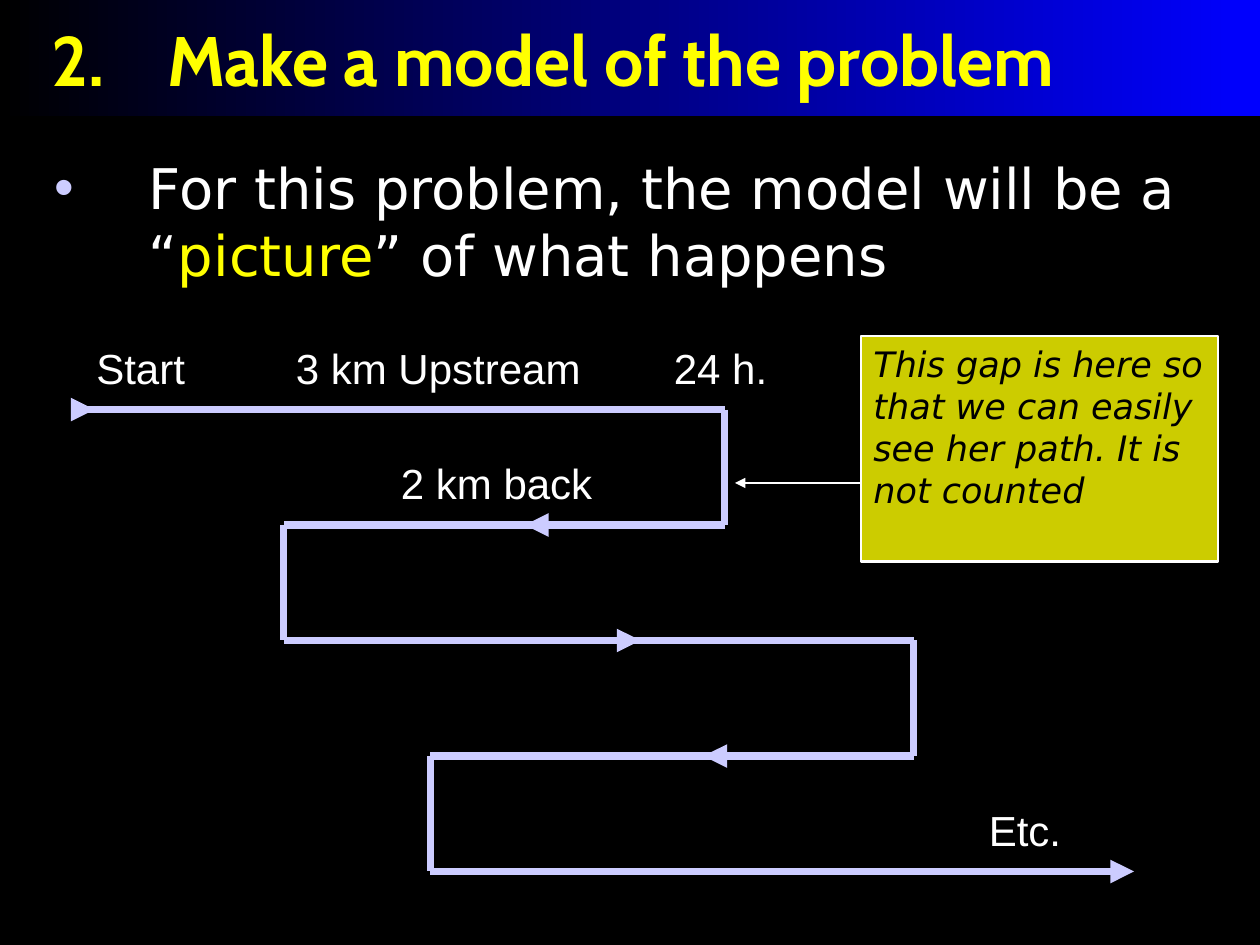
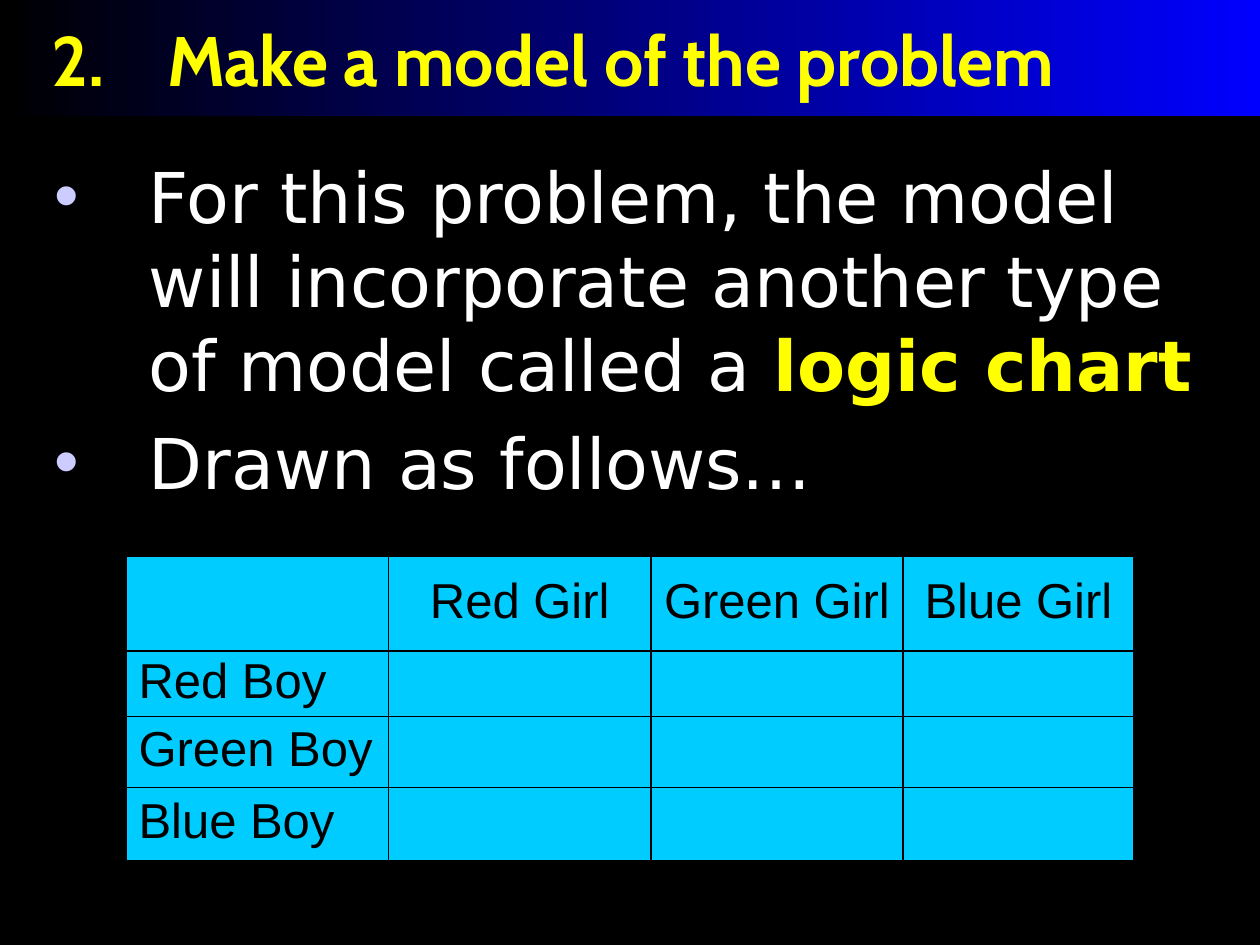
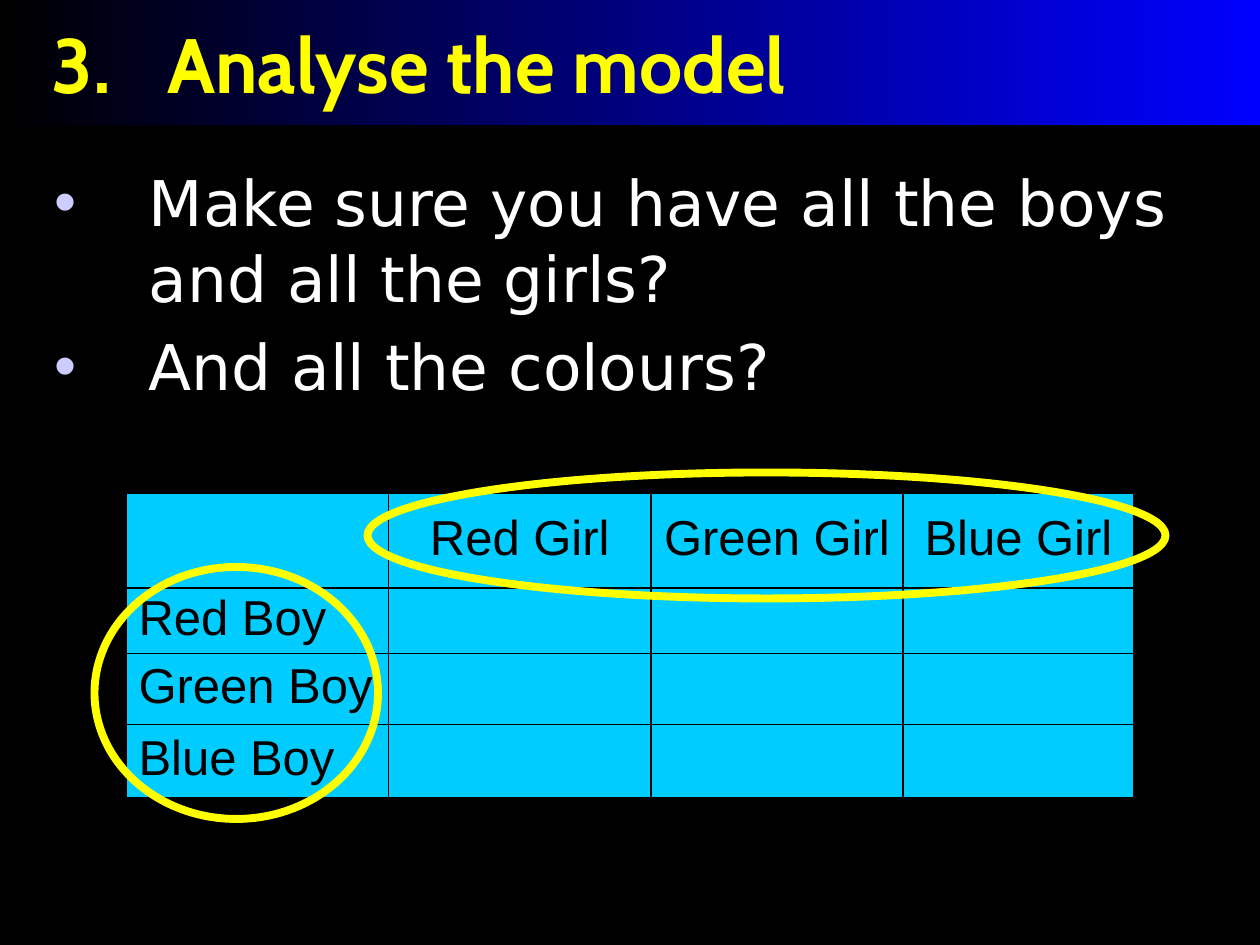
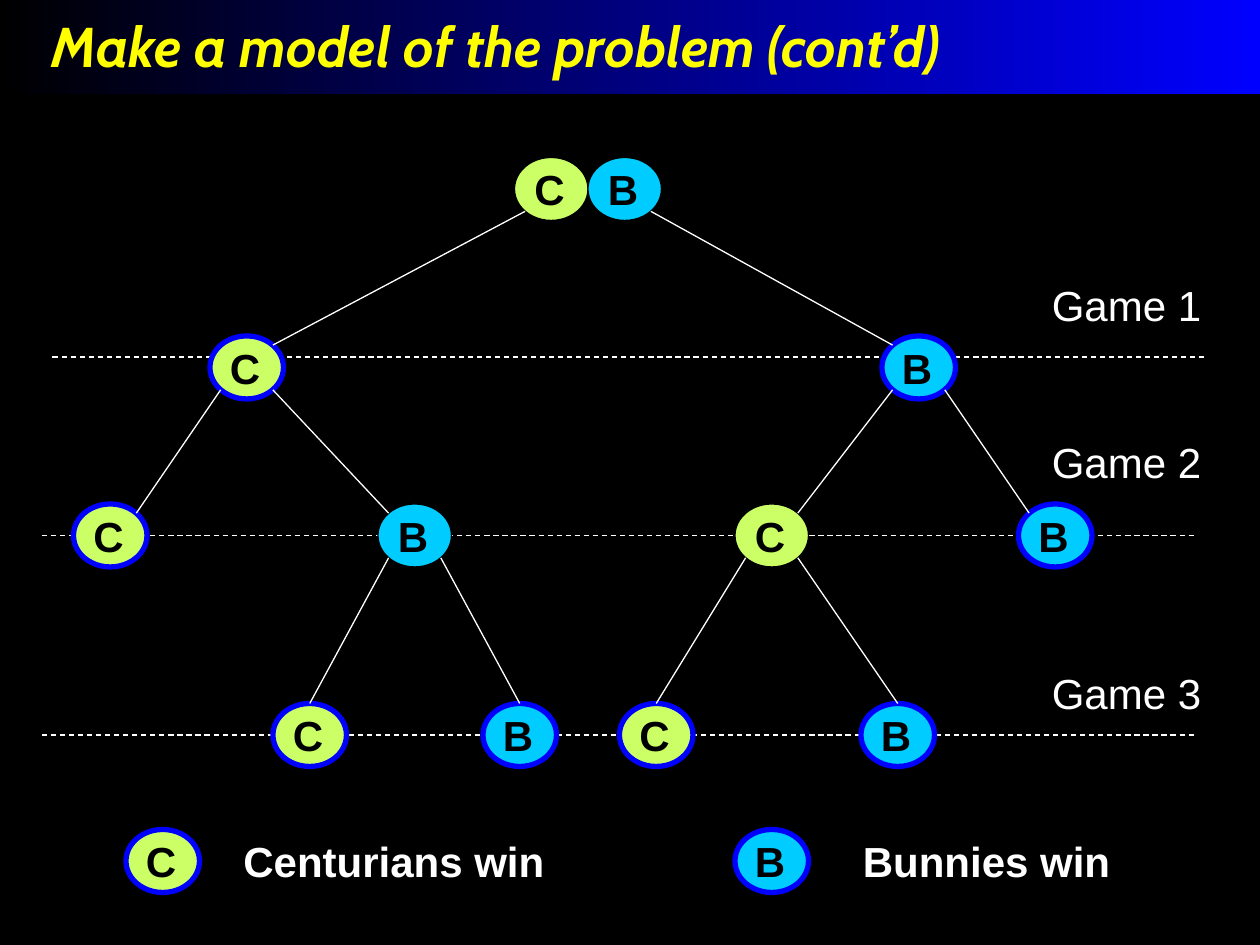
import pptx
import pptx.util
import pptx.dml.color
import pptx.enum.dml
import pptx.enum.shapes
import pptx.enum.text
import pptx.oxml
import pptx.oxml.ns

Pt = pptx.util.Pt
RGBColor = pptx.dml.color.RGBColor
SHAPE = pptx.enum.shapes.MSO_SHAPE
ALIGN = pptx.enum.text.PP_ALIGN
ANCHOR = pptx.enum.text.MSO_ANCHOR
qn = pptx.oxml.ns.qn

# Colours and fonts
BLACK = RGBColor(0x00, 0x00, 0x00)
WHITE = RGBColor(0xFF, 0xFF, 0xFF)
BLUE = RGBColor(0x00, 0x00, 0xFF)
YELLOW = RGBColor(0xFF, 0xFF, 0x00)
LILAC = RGBColor(0xCC, 0xCC, 0xFF)
OLIVE = RGBColor(0xCC, 0xCC, 0x00)
CYAN = RGBColor(0x00, 0xCC, 0xFF)
LIME = RGBColor(0xCC, 0xFF, 0x66)
HEAD, BODY, PLAIN = "Cabin", "DejaVu Sans", "Arial"


def add_xml(parent, tag, inner="", **attrs):
    """Append one DrawingML element to parent."""
    names = " ".join(f'{key}="{val}"' for key, val in attrs.items())
    space = pptx.oxml.ns.nsdecls("a")
    parent.append(pptx.oxml.parse_xml(
        f"<a:{tag} {space} {names}>{inner}</a:{tag}>"))


def solid(color):
    return f'<a:solidFill><a:srgbClr val="{color}"/></a:solidFill>'


def write(para, text, size=24, font=PLAIN, color=WHITE, bold=False,
          italic=False, align=None):
    """Add a run of text to a paragraph."""
    run = para.add_run()
    run.text = text
    run.font.size, run.font.name = Pt(size), font
    run.font.bold, run.font.italic = bold, italic
    run.font.color.rgb = color
    if align is not None:
        para.alignment = align


def hang(para, indent):
    """Give a paragraph a hanging indent and return its properties."""
    props = para._p.get_or_add_pPr()
    props.set("marL", str(Pt(indent)))
    props.set("indent", str(-Pt(indent)))
    return props


class Deck:
    """The shared style and the current slide."""

    def __init__(self):
        self.prs = pptx.Presentation()
        self.prs.slide_width, self.prs.slide_height = Pt(720), Pt(540)
        fill = self.prs.slide_master.background.fill
        fill.solid()
        fill.fore_color.rgb = BLACK

    def start(self, title, size=40, number=None, top=0, italic=False):
        """Add a slide with its title band."""
        layout = self.prs.slide_layouts[6]
        self.shapes = self.prs.slides.add_slide(layout).shapes
        band = self.shape(SHAPE.RECTANGLE, 0, top, 720, 1.2 * size + 18.5)
        band.fill.gradient()
        band.fill.gradient_angle = 0
        for stop, color in zip(band.fill.gradient_stops, (BLACK, BLUE)):
            stop.color.rgb = color
        frame = band.text_frame
        frame.margin_left, frame.margin_right = Pt(29.5), Pt(10)
        frame.margin_top = frame.margin_bottom = Pt(9.4)
        frame.vertical_anchor = ANCHOR.TOP
        para = frame.paragraphs[0]
        if number:
            add_xml(hang(para, 66), "buAutoNum", type="arabicPeriod",
                    startAt=number)
        write(para, title, size=size, font=HEAD, color=YELLOW, bold=True,
              italic=italic, align=ALIGN.LEFT)

    def shape(self, kind, x, y, wide, high, fill=None, line=None, width=1):
        item = self.shapes.add_shape(kind, Pt(x), Pt(y), Pt(wide), Pt(high))
        item.shadow.inherit = False
        if fill is None:
            item.fill.background()
        else:
            item.fill.solid()
            item.fill.fore_color.rgb = fill
        if line is None:
            item.line.fill.background()
        else:
            item.line.color.rgb = line
            item.line.width = Pt(width)
        return item

    def box(self, x, y, wide, high):
        frame = self.shapes.add_textbox(
            Pt(x), Pt(y), Pt(wide), Pt(high)).text_frame
        frame.word_wrap = True
        return frame

    def label(self, text, x, y, wide=138, **form):
        write(self.box(x, y, wide, 36).paragraphs[0], text, **form)

    def list(self, items, y, high, size):
        """Bulleted text; each item is a list of (text, format) runs."""
        frame = self.box(24, y, 696, high)
        for index, runs in enumerate(items):
            para = frame.add_paragraph() if index else frame.paragraphs[0]
            if index:
                para.space_before = Pt(0.2 * size)
            props = hang(para, 54)
            add_xml(props, "buClr", f'<a:srgbClr val="{LILAC}"/>')
            add_xml(props, "buFont", typeface=PLAIN)
            add_xml(props, "buChar", char="•")
            for text, form in runs:
                write(para, text, size=size, font=BODY, **form)

    def line(self, begin, end, color=WHITE, width=0.75, arrow=False,
             dash=False):
        item = self.shapes.add_connector(
            pptx.enum.shapes.MSO_CONNECTOR.STRAIGHT,
            *(Pt(val) for val in (*begin, *end)))
        item.line.color.rgb = color
        item.line.width = Pt(width)
        if dash:
            item.line.dash_style = pptx.enum.dml.MSO_LINE.DASH
        props = item._element.spPr
        if arrow:
            add_xml(props.find(qn("a:ln")), "tailEnd", type="triangle")
        add_xml(props, "effectLst")

    def chart(self, y):
        """The logic chart: girls across, boys down."""
        cols, rows = (150, 150, 144, 132), (54, 37.5, 40.5, 42)
        tints = ("Red", "Green", "Blue")
        grid = self.shapes.add_table(
            4, 4, Pt(72), Pt(y), Pt(sum(cols)), Pt(sum(rows))).table
        grid.first_row = grid.horz_banding = False
        for col, wide in zip(grid.columns, cols):
            col.width = Pt(wide)
        for row, high in zip(grid.rows, rows):
            row.height = Pt(high)
        for cell in grid.iter_cells():
            props = cell._tc.get_or_add_tcPr()
            for side in ("lnL", "lnR", "lnT", "lnB"):
                add_xml(props, side, solid(BLACK), w=Pt(1))
            cell.fill.solid()
            cell.fill.fore_color.rgb = CYAN
            cell.vertical_anchor = ANCHOR.MIDDLE
        for index, tint in enumerate(tints, 1):
            for cell, name, align in (
                    (grid.cell(0, index), "Girl", ALIGN.CENTER),
                    (grid.cell(index, 0), "Boy", ALIGN.LEFT)):
                para = cell.text_frame.paragraphs[0]
                para.line_spacing = 0.9
                write(para, f"{tint} {name}", size=28, color=BLACK,
                      align=align)

    def node(self, team, x, y, won=True):
        """A team's disc, with a blue rim where the team has won."""
        disc = self.shape(SHAPE.OVAL, x, y, 42, 36,
                          fill=LIME if team == "C" else CYAN,
                          line=BLUE if won else BLACK,
                          width=3 if won else 0.75)
        disc.text_frame.word_wrap = False
        disc.text_frame.vertical_anchor = ANCHOR.MIDDLE
        write(disc.text_frame.paragraphs[0], team, color=BLACK, bold=True,
              align=ALIGN.RIGHT)


def rim(x, y, across, down):
    """Point on a disc's rim: across and down are -1, 0 or 1."""
    part = 0.71 if across else 1
    return x + 21 + 21 * part * across, y + 18 + 18 * part * down


def draw_path(deck):
    deck.start("Make a model of the problem", number=2)
    deck.list([[("For this problem, the model will be a “", {}),
                ("picture", {"color": YELLOW}),
                ("” of what happens", {})]], 84, 102, 32)

    # Each leg: start, arrow tip, start of the rest, end
    legs = ((42, 54, 48, 414), (414, 300, 312, 162), (162, 366, 360, 522),
            (522, 402, 408, 246), (246, 648, None, None))
    pen = {"color": LILAC, "width": 4.5}
    for index, (begin, tip, rest, end) in enumerate(legs):
        y = 234 + 66 * index
        deck.line((begin, y), (tip, y), arrow=True, **pen)
        if end:
            deck.line((rest, y), (end, y), **pen)
            deck.line((end, y), (end, y + 66), **pen)

    for text, x, y, wide in (
            ("Start", 48, 192, 138), ("3 km Upstream", 162, 192, 180),
            ("24 h.", 378, 192, 138), ("2 km back", 222, 258, 138),
            ("Etc.", 558, 456, 138)):
        deck.label(text, x, y, wide)

    # Remark on the gap
    note = deck.shape(SHAPE.RECTANGLE, 492, 192, 204, 129, fill=OLIVE,
                      line=WHITE, width=1.5)
    note.text_frame.word_wrap = True
    note.text_frame.vertical_anchor = ANCHOR.TOP
    write(note.text_frame.paragraphs[0],
          "This gap is here so that we can easily see her path. "
          "It is not counted",
          size=20, font=BODY, color=BLACK, italic=True, align=ALIGN.LEFT)
    deck.line((492, 276), (420, 276), width=1.5, arrow=True)


def draw_logic(deck):
    deck.start("Make a model of the problem", number=2)
    deck.list([[("For this problem, the model will incorporate another type "
                 "of model called a ", {}),
                ("logic chart", {"color": YELLOW, "bold": True})],
               [("Drawn as follows…", {})]], 84, 222, 40)
    deck.chart(318)


def draw_check(deck):
    deck.start("Analyse the model", size=44, number=3)
    deck.list([[("Make sure you have all the boys and all the girls?", {})],
               [("And all the colours?", {})]], 90, 162, 36)
    deck.chart(282)
    for ring in ((210, 270, 456, 72), (54, 324, 162, 144)):
        deck.shape(SHAPE.OVAL, *ring, line=YELLOW, width=4.5)


def draw_tree(deck):
    deck.start("Make a model of the problem (cont’d)", size=32, top=-3,
               italic=True)

    # Games
    for game, left, y, top in ((1, 30, 204, 156), (2, 24, 306, 246),
                               (3, 24, 420, 378)):
        deck.line((left, y), (left + 660, y), dash=True)
        deck.label(f"Game {game}", 594, top, 102)

    # Discs, named by the winners so far: team, left, top, ends the match
    nodes = {
        "c": ("C", 294, 90, False), "b": ("B", 336, 90, False),
        "C": ("C", 120, 192, True), "B": ("B", 504, 192, True),
        "CC": ("C", 42, 288, True), "CB": ("B", 216, 288, False),
        "BC": ("C", 420, 288, False), "BB": ("B", 582, 288, True),
        "CBC": ("C", 156, 402, True), "CBB": ("B", 276, 402, True),
        "BCC": ("C", 354, 402, True), "BCB": ("B", 492, 402, True),
    }
    for name, (team, x, y, won) in nodes.items():
        deck.node(team, x, y, won)
        if name.islower():
            continue
        above = name[:-1] or name.lower()
        up_x, up_y = nodes[above][1:3]
        side = 1 if x > up_x else -1
        deck.line(rim(up_x, up_y, side, 1),
                  rim(x, y, 0 if len(name) == 3 else -side, -1))

    # Key
    for team, text, x, left in (("C", "Centurians win", 72, 132),
                                ("B", "Bunnies win", 420, 486)):
        deck.node(team, x, 474)
        deck.label(text, left, 474, 222, bold=True)


def main():
    deck = Deck()
    for draw in (draw_path, draw_logic, draw_check, draw_tree):
        draw(deck)
    deck.prs.save("out.pptx")


if __name__ == "__main__":
    main()
